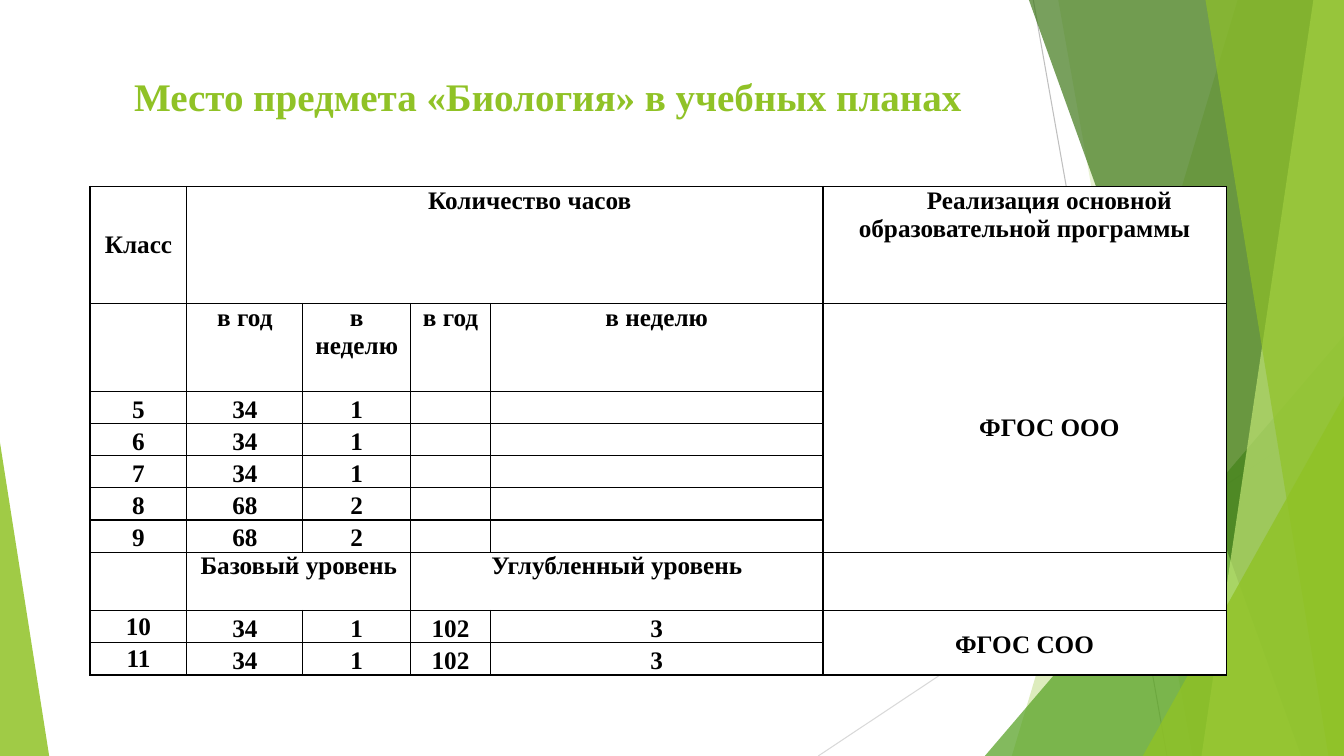
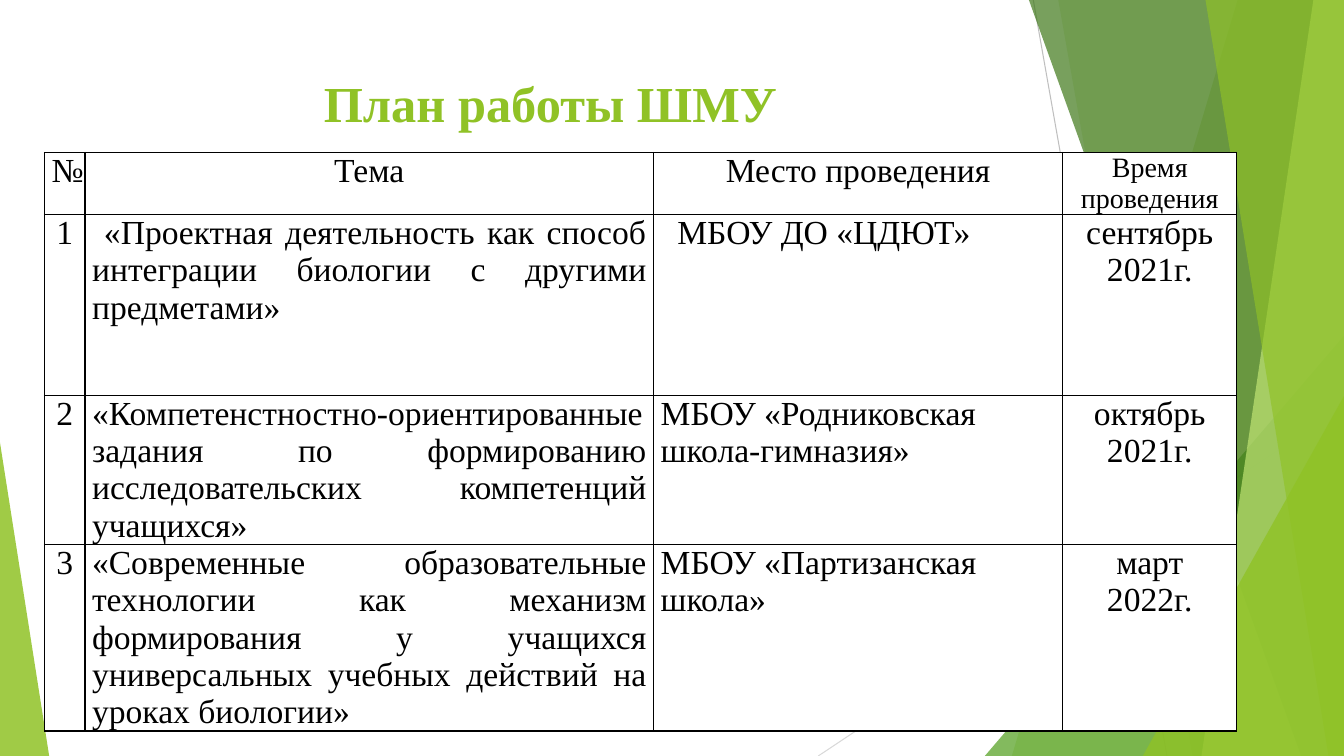
from lxml.etree import SubElement
from pptx import Presentation
from pptx.dml.color import RGBColor
from pptx.enum.shapes import MSO_CONNECTOR, MSO_SHAPE
from pptx.enum.text import MSO_ANCHOR, PP_ALIGN
from pptx.oxml import parse_xml
from pptx.oxml.ns import nsdecls, qn
from pptx.util import Cm, Pt

WIDTH, HEIGHT = 33.87, 19.05
FONT = "Times New Roman"
LINE_HEIGHT = 1.11
COLORS = {
    "accent": "90C226",
    "leaf": "54A021",
    "forest": "3F7819",
    "lime": "C0E474",
    "gray": "BFBFBF",
    "pale gray": "D9D9D9",
    "text": "000000",
    "cell": "FFFFFF",
}


def color(name):
    return RGBColor.from_string(COLORS[name])


def apply_format(target, values):
    for name, value in values.items():
        setattr(target, name, value)


def paint(shape, color_name, opacity):
    shape.shadow.inherit = False
    shape.line.fill.background()
    shape.fill.solid()
    shape.fill.fore_color.rgb = color(color_name)
    color_element = shape._element.spPr.find(qn("a:solidFill"))[0]
    SubElement(color_element, qn("a:alpha")).set("val", str(opacity * 1000))


def add_line(slide, start, end, color_name):
    points = [Cm(value) for value in (*start, *end)]
    connector = slide.shapes.add_connector(MSO_CONNECTOR.STRAIGHT, *points)
    connector.line.color.rgb = color(color_name)
    connector.line.width = Pt(0.75)
    SubElement(connector._element.spPr, qn("a:effectLst"))


def add_ray(slide, top_x, bottom_x, right, bottom, color_name, opacity):
    builder = slide.shapes.build_freeform(Cm(top_x), 0, scale=1.0)
    corners = [(right, 0), (right, bottom), (bottom_x, bottom)]
    builder.add_line_segments([(Cm(x), Cm(y)) for x, y in corners], close=True)
    paint(builder.convert_to_shape(), color_name, opacity)


def add_corner(slide, left, top, right, bottom, apex, color_name, opacity):
    shape = slide.shapes.add_shape(
        MSO_SHAPE.ISOSCELES_TRIANGLE, Cm(left), Cm(top), Cm(right - left), Cm(bottom - top)
    )
    shape.adjustments[0] = apex
    paint(shape, color_name, opacity)


def add_backdrop(slide, right, bottom):
    add_line(slide, (right - 7.83, 0), (right - 4.46, bottom), "gray")
    add_line(slide, (right, 10.24), (right - 13.25, bottom), "pale gray")
    rays_behind = [(2.68, 8.37, "accent", 30), (7.2, 3.82, "accent", 20)]
    rays_front = [
        (7.94, 1.08, "forest", 70),
        (0.77, 3.59, "lime", 70),
        (3.49, 0.39, "accent", 65),
    ]
    for top_x, bottom_x, *look in rays_behind:
        add_ray(slide, right - top_x, right - bottom_x, right, bottom, *look)
    add_corner(slide, right - 9.05, 8.46, right, bottom, 1, "leaf", 72)
    for top_x, bottom_x, *look in rays_front:
        add_ray(slide, right - top_x, right - bottom_x, right, bottom, *look)
    add_corner(slide, right - 5.07, 9.98, right, bottom, 1, "accent", 80)
    add_corner(slide, 0, 11.15, 1.24, bottom, 0, "accent", 85)


def write(paragraph, text, size, bold, color_name, indent=0):
    run = paragraph.add_run()
    run.text = text
    apply_format(run.font, {"name": FONT, "size": Pt(size), "bold": bold})
    run.font.color.rgb = color(color_name)
    for script in ("a:ea", "a:cs"):
        SubElement(run._r.get_or_add_rPr(), qn(script)).set("typeface", FONT)
    if indent:
        paragraph._p.get_or_add_pPr().set("indent", str(Cm(indent)))


def add_title(slide, box, text, size, indent):
    frame = slide.shapes.add_textbox(*[Cm(value) for value in box]).text_frame
    apply_format(frame, {"word_wrap": True, "vertical_anchor": MSO_ANCHOR.TOP})
    write(frame.paragraphs[0], text, size, True, "accent", indent)


def add_borders(cell):
    properties = cell._tc.get_or_add_tcPr()
    for index, side in enumerate(("lnL", "lnR", "lnT", "lnB")):
        border = parse_xml(
            f'<a:{side} {nsdecls("a")} w="{Pt(1)}"><a:solidFill>'
            f'<a:srgbClr val="{COLORS["text"]}"/></a:solidFill></a:{side}>'
        )
        properties.insert(index, border)


def set_end_font(paragraph, size):
    end = SubElement(paragraph._p, qn("a:endParaRPr"))
    end.set("sz", str(size * 100))
    for script in ("a:latin", "a:ea", "a:cs"):
        SubElement(end, qn(script)).set("typeface", FONT)


def add_grid(slide, left, top, widths, heights, rows, style, merges=()):
    table = slide.shapes.add_table(
        len(heights), len(widths), Cm(left), Cm(top), Cm(sum(widths)), Cm(sum(heights))
    ).table
    apply_format(table, {"first_row": False, "horz_banding": False})
    for column, width in zip(table.columns, widths):
        column.width = Cm(width)
    for row, height in zip(table.rows, heights):
        row.height = Cm(height)
    for first, last in merges:
        table.cell(*first).merge(table.cell(*last))
    for row_index, row in enumerate(rows):
        for column_index, text in enumerate(row):
            cell = table.cell(row_index, column_index)
            look = style(row_index, column_index)
            margins = {"margin_left": 0.18, "margin_right": 0.18, "margin_top": 0, "margin_bottom": 0}
            apply_format(cell, {name: Cm(value) for name, value in margins.items()})
            cell.vertical_anchor = look["anchor"]
            cell.fill.solid()
            cell.fill.fore_color.rgb = color("cell")
            add_borders(cell)
            paragraph = cell.text_frame.paragraphs[0]
            line_spacing = Pt(look["size"] * LINE_HEIGHT * look["spacing"])
            apply_format(paragraph, {"alignment": look["alignment"], "line_spacing": line_spacing})
            if text:
                write(paragraph, text, look["size"], look["bold"], "text", look["indent"])
            set_end_font(paragraph, look["size"])


def hours_style(row, column):
    heading = row in (0, 1, 7)
    middle = not heading or (row, column) in ((0, 0), (1, 5))
    single_spaced = heading or (row > 7 and column == 0)
    return {
        "anchor": MSO_ANCHOR.MIDDLE if middle else MSO_ANCHOR.TOP,
        "alignment": PP_ALIGN.CENTER,
        "spacing": 1 if single_spaced else 1.15,
        "size": 18,
        "bold": True,
        "indent": 1.25 if (row, column) in ((0, 1), (0, 5), (1, 5)) else 0,
    }


def plan_style(row, column):
    body_alignments = (PP_ALIGN.CENTER, PP_ALIGN.JUSTIFY, PP_ALIGN.LEFT, PP_ALIGN.CENTER)
    return {
        "anchor": MSO_ANCHOR.TOP,
        "alignment": body_alignments[column] if row else PP_ALIGN.CENTER,
        "spacing": 1,
        "size": 20 if (row, column) == (0, 3) else 24,
        "bold": False,
        "indent": {(1, 1): 0.3, (1, 2): 0.42}.get((row, column), 0),
    }


def new_slide(presentation):
    slide = presentation.slides.add_slide(presentation.slide_layouts[6])
    add_backdrop(slide, WIDTH, HEIGHT)
    return slide


def build_hours_slide(presentation):
    slide = new_slide(presentation)
    add_title(slide, (1.88, 1.69, 23.88, 2.3), "Место предмета «Биология» в учебных планах", 27.9, 1.25)
    yearly_hours = [("5", "34", "1"), ("6", "34", "1"), ("7", "34", "1"), ("8", "68", "2"), ("9", "68", "2")]
    rows = [
        ("Класс", "Количество часов", "", "", "", "Реализация основной образовательной программы"),
        ("", "в год", "в неделю", "в год", "в неделю", "ФГОС ООО"),
        *[(*hours, "", "", "") for hours in yearly_hours],
        ("", "Базовый уровень", "", "Углубленный уровень", "", ""),
        ("10", "34", "1", "102", "3", "ФГОС СОО"),
        ("11", "34", "1", "102", "3", ""),
    ]
    merges = [
        ((0, 1), (0, 4)),
        ((1, 5), (6, 5)),
        ((7, 1), (7, 2)),
        ((7, 3), (7, 4)),
        ((8, 5), (9, 5)),
    ]
    widths = [2.44, 2.92, 2.72, 2.01, 8.38, 10.16]
    heights = [2.95, 2.21, *[0.81] * 5, 1.47, 0.81, 0.81]
    add_grid(slide, 2.27, 4.7, widths, heights, rows, hours_style, merges)


def build_plan_slide(presentation):
    slide = new_slide(presentation)
    add_title(slide, (1.88, 1.69, 23.88, 2), "План работы ШМУ", 36, 6.03)
    rows = [
        ("№", "Тема", "Место проведения", "Время проведения"),
        (
            "1",
            "«Проектная деятельность как способ интеграции биологии с другими предметами»",
            "МБОУ ДО «ЦДЮТ»",
            "сентябрь 2021г.",
        ),
        (
            "2",
            "«Компетенстностно-ориентированные задания по формированию исследовательских компетенций учащихся»",
            "МБОУ «Родниковская школа-гимназия»",
            "октябрь 2021г.",
        ),
        (
            "3",
            "«Современные образовательные технологии как механизм формирования у учащихся "
            "универсальных учебных действий на уроках биологии»",
            "МБОУ «Партизанская школа»",
            "март 2022г.",
        ),
    ]
    widths = [1.02, 14.33, 10.31, 4.39]
    heights = [1.55, 4.55, 3.76, 4.67]
    add_grid(slide, 1.12, 3.84, widths, heights, rows, plan_style)


def main():
    presentation = Presentation()
    apply_format(presentation, {"slide_width": Cm(WIDTH), "slide_height": Cm(HEIGHT)})
    build_hours_slide(presentation)
    build_plan_slide(presentation)
    presentation.save("out.pptx")


if __name__ == "__main__":
    main()
